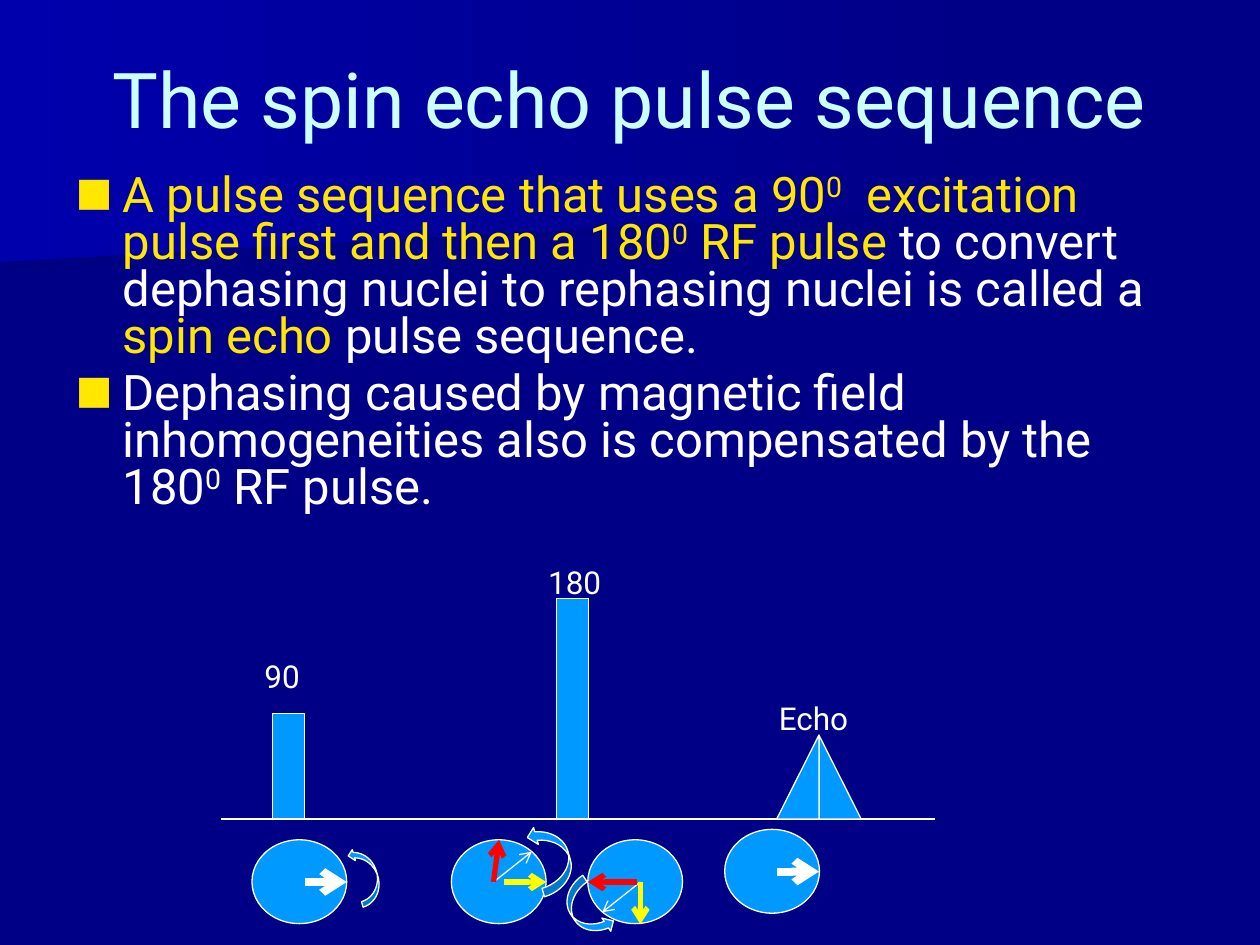
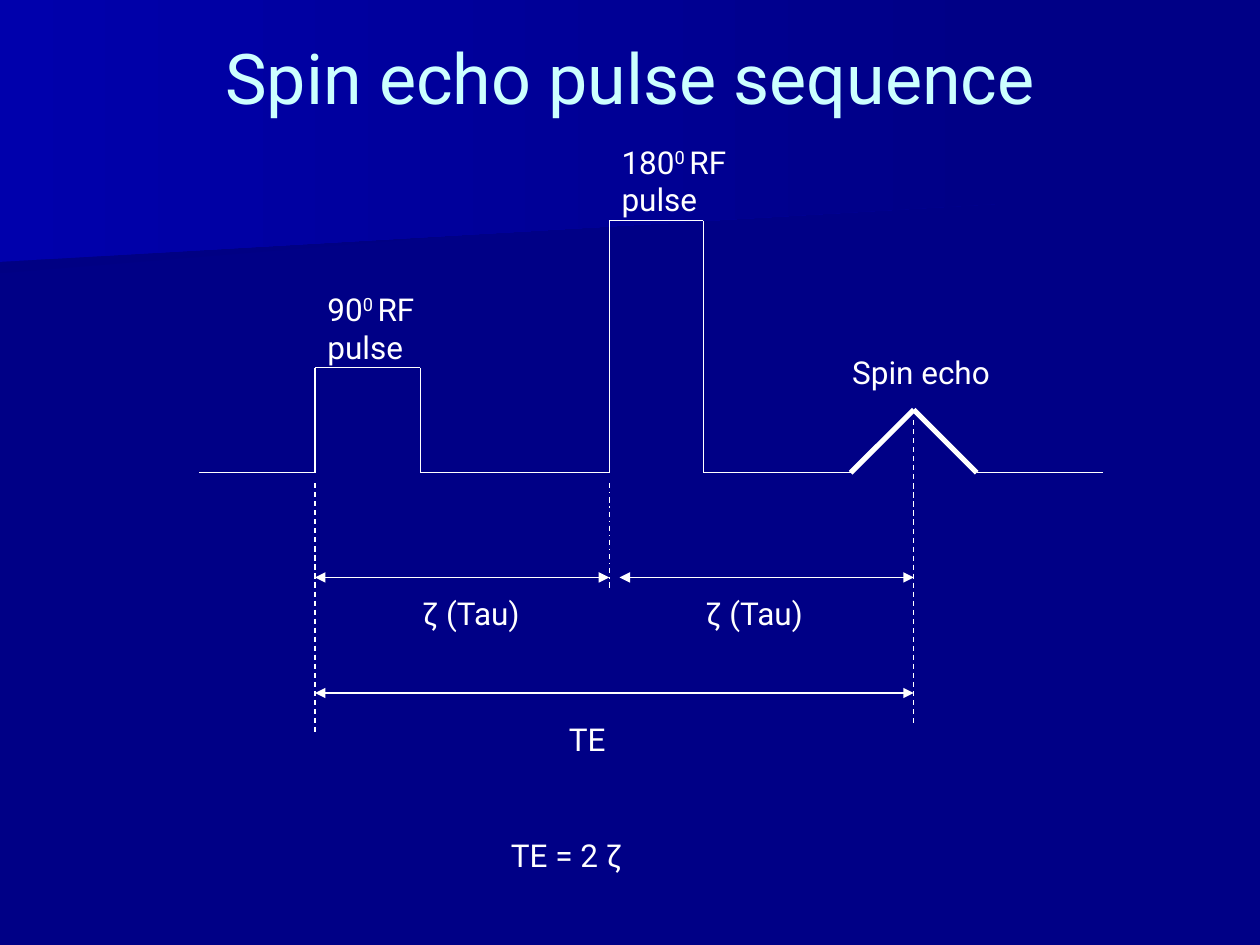
from dataclasses import dataclass

from pptx import Presentation
from pptx.dml.color import RGBColor
from pptx.enum.dml import MSO_LINE
from pptx.enum.shapes import MSO_CONNECTOR, MSO_SHAPE
from pptx.enum.text import MSO_ANCHOR, MSO_AUTO_SIZE, PP_ALIGN
from pptx.oxml.ns import qn
from pptx.slide import Slide
from pptx.text.text import _Paragraph as Paragraph
from pptx.util import Cm, Pt
from lxml import etree

# Shared look
NAVY = RGBColor(0x00, 0x00, 0x86)
DEEP_NAVY = RGBColor(0x00, 0x00, 0x83)
ROYAL = RGBColor(0x00, 0x00, 0xAC)
PALE_CYAN = RGBColor(0xCC, 0xFF, 0xFF)
GOLD = RGBColor(0xFF, 0xE7, 0x01)
SKY = RGBColor(0x00, 0x99, 0xFF)
WHITE = RGBColor(0xFF, 0xFF, 0xFF)
YELLOW = RGBColor(0xFF, 0xFF, 0x00)
RED = RGBColor(0xFF, 0x00, 0x00)
FONT = "Roboto"
THIN, BOLD, HEAVY = 0.75, 3, 4.5

STRAIGHT = MSO_CONNECTOR.STRAIGHT
RECTANGLE = MSO_SHAPE.RECTANGLE
ELLIPSE = MSO_SHAPE.OVAL
RIGHT_TRIANGLE = MSO_SHAPE.RIGHT_TRIANGLE
CURVED_ARROW = MSO_SHAPE.CURVED_UP_ARROW
DASH, DASH_DOT = MSO_LINE.DASH, MSO_LINE.DASH_DOT
MIDDLE, CENTER = MSO_ANCHOR.MIDDLE, PP_ALIGN.CENTER
NO_AUTOFIT = MSO_AUTO_SIZE.NONE
TITLE_AND_BODY, TITLE_ONLY = 1, 5


# Repeated elements, all lengths in centimetres
@dataclass
class Span:
    text: str
    color: RGBColor = WHITE
    raised: bool = False


@dataclass
class Label:
    spans: list[Span]
    left: float
    top: float
    width: float
    height: float = 1.02


@dataclass
class Line:
    x1: float
    y1: float
    x2: float
    y2: float
    color: RGBColor = WHITE
    weight: float = THIN
    dash: MSO_LINE | None = None
    head: str = ""
    tail: str = ""


@dataclass
class Figure:
    kind: MSO_SHAPE
    left: float
    top: float
    width: float
    height: float
    rotation: float = 0
    flipped: bool = False


def write_spans(para: Paragraph, spans: list[Span], size: float) -> None:
    for span in spans:
        run = para.add_run()
        run.text = span.text
        run.font.name = FONT
        run.font.size = Pt(size)
        run.font.color.rgb = span.color
        if span.raised:
            run._r.get_or_add_rPr().set("baseline", "30000")


def draw_label(slide: Slide, label: Label) -> None:
    box = slide.shapes.add_textbox(
        Cm(label.left), Cm(label.top), Cm(label.width), Cm(label.height))
    box.text_frame.word_wrap = True
    write_spans(box.text_frame.paragraphs[0], label.spans, 18)


def draw_line(slide: Slide, line: Line) -> None:
    connector = slide.shapes.add_connector(
        STRAIGHT, Cm(line.x1), Cm(line.y1), Cm(line.x2), Cm(line.y2))
    connector.line.color.rgb = line.color
    connector.line.width = Pt(line.weight)
    if line.dash:
        connector.line.dash_style = line.dash
    outline = connector.line._get_or_add_ln()
    for tag, style in (("a:headEnd", line.head), ("a:tailEnd", line.tail)):
        if style:
            etree.SubElement(outline, qn(tag), type=style)
    etree.SubElement(connector.element.spPr, qn("a:effectLst"))


def draw_figure(slide: Slide, figure: Figure) -> None:
    shape = slide.shapes.add_shape(
        figure.kind, Cm(figure.left), Cm(figure.top),
        Cm(figure.width), Cm(figure.height))
    shape.shadow.inherit = False
    shape.fill.solid()
    shape.fill.fore_color.rgb = SKY
    shape.line.color.rgb = WHITE
    shape.line.width = Pt(THIN)
    shape.rotation = figure.rotation
    if figure.flipped:
        shape.element.spPr.get_or_add_xfrm().set("flipH", "1")


def set_title(slide: Slide, text: str, size: float, height: float) -> None:
    title = slide.shapes.title
    title.left, title.top = Cm(1.27), Cm(0.76)
    title.width, title.height = Cm(22.86), Cm(height)
    frame = title.text_frame
    frame.auto_size = NO_AUTOFIT
    frame.vertical_anchor = MIDDLE
    frame.paragraphs[0].alignment = CENTER
    write_spans(frame.paragraphs[0], [Span(text, PALE_CYAN)], size)


def set_bullet(para: Paragraph) -> None:
    properties = para._p.get_or_add_pPr()
    properties.set("marL", str(Cm(0.95)))
    properties.set("indent", str(-Cm(0.95)))
    color = etree.SubElement(properties, qn("a:buClr"))
    etree.SubElement(color, qn("a:srgbClr"), val=str(GOLD))
    etree.SubElement(properties, qn("a:buSzPct"), val="80000")
    etree.SubElement(properties, qn("a:buFont"), typeface=FONT)
    etree.SubElement(properties, qn("a:buChar"), char="■")


def set_bands(deck: Presentation, slide: Slide) -> None:
    """Colour the master and move the two gradient bands to its back."""
    master = deck.slide_master
    master.background.fill.solid()
    master.background.fill.fore_color.rgb = NAVY
    bands = [
        (DEEP_NAVY, [(0, 2.57), (19.79, 2.57), (19.76, 3.89), (0, 5.51)]),
        (ROYAL, [(0, 0), (20.12, 0), (20.12, 4.11), (0, 5.28)]),
    ]
    for index, (color, corners) in enumerate(bands):
        points = [(Cm(x), Cm(y)) for x, y in corners]
        builder = slide.shapes.build_freeform(*points[0])
        builder.add_line_segments(points[1:])
        band = builder.convert_to_shape()
        band.shadow.inherit = False
        band.line.fill.background()
        band.fill.gradient()
        band.fill.gradient_angle = 0
        for stop, stop_color in zip(band.fill.gradient_stops, (color, NAVY)):
            stop.color.rgb = stop_color
        band.element.nvSpPr.cNvPr.set("id", str(100 + index))
        master.shapes.element.insert(2 + index, band.element)


def build_overview(slide: Slide) -> None:
    set_title(slide, "The spin echo pulse sequence", 44, 2.41)

    # Bulleted explanation
    body = slide.placeholders[1]
    body.left, body.top = Cm(1.27), Cm(3.39)
    body.width, body.height = Cm(22.86), Cm(15.04)
    frame = body.text_frame
    frame.auto_size = NO_AUTOFIT
    bullets = [
        [Span("A pulse sequence that uses a 90", GOLD), Span("0", GOLD, True),
         Span("  excitation pulse first and then a 180", GOLD),
         Span("0", GOLD, True), Span(" RF pulse", GOLD),
         Span(" to convert dephasing nuclei to rephasing nuclei is called a "),
         Span("spin echo", GOLD), Span(" pulse sequence.")],
        [Span("Dephasing caused by magnetic field inhomogeneities also is "
              "compensated by the 180"),
         Span("0", raised=True), Span(" RF pulse.")],
    ]
    for index, spans in enumerate(bullets):
        para = frame.add_paragraph() if index else frame.paragraphs[0]
        para.line_spacing = 0.8
        para.space_before = Pt(5.6)
        set_bullet(para)
        write_spans(para, spans, 28)

    # Pulses and echo on the time axis
    axis, echo_x, echo_half, echo_height = 16.51, 16.51, 0.85, 1.69
    draw_line(slide, Line(4.45, axis, 18.85, axis))
    for left, height in ((5.5, 2.12), (11.22, 4.45)):
        draw_figure(slide, Figure(RECTANGLE, left, axis - height, 0.64, height))
    for left, flipped in ((echo_x, False), (echo_x - echo_half, True)):
        draw_figure(slide, Figure(RIGHT_TRIANGLE, left, axis - echo_height,
                                  echo_half, echo_height, flipped=flipped))
    for text, left, top, width in (("90", 5.08, 13.12, 1.48),
                                   ("180", 10.8, 11.22, 1.69),
                                   ("Echo", 15.45, 13.97, 1.91)):
        draw_label(slide, Label([Span(text)], left, top, width))

    # Spin discs with their magnetisation vectors
    for left, top in ((5.08, 16.93), (9.1, 16.93),
                      (11.85, 16.93), (14.61, 16.72)):
        draw_figure(slide, Figure(ELLIPSE, left, top, 1.91, 1.69))
    vectors = [
        Line(6.14, 17.78, 6.99, 17.78, WHITE, HEAVY),
        Line(10.16, 17.78, 11.01, 17.78, YELLOW, BOLD),
        Line(9.95, 17.78, 10.72, 17.17),
        Line(9.95, 17.78, 10.06, 16.93, RED, BOLD),
        Line(12.91, 17.78, 12.14, 18.39),
        Line(12.91, 17.78, 12.91, 18.63, YELLOW, BOLD),
        Line(12.85, 17.78, 11.85, 17.78, RED, BOLD),
        Line(15.66, 17.57, 16.51, 17.57, WHITE, HEAVY),
    ]
    for vector in vectors:
        vector.tail = "arrow"
        draw_line(slide, vector)

    # Rotation arrows
    for left, top, width, height, rotation in (
            (11.2, 18.03, 1.27, 0.64, 56.1),
            (6.78, 17.42, 1.19, 0.46, 253.8),
            (10.41, 16.94, 1.42, 0.71, 253.8)):
        draw_figure(slide, Figure(CURVED_ARROW, left, top, width, height, rotation))


def build_timing(slide: Slide) -> None:
    set_title(slide, "Spin echo pulse sequence", 40, 1.57)

    # Waveform
    axis, first_pulse, second_pulse, echo = 9.53, 6.35, 12.28, 18.42
    echo_top = 8.26
    waveform = [
        (4.02, axis), (first_pulse, axis), (first_pulse, 7.41), (8.47, 7.41),
        (8.47, axis), (second_pulse, axis), (second_pulse, 4.45),
        (14.18, 4.45), (14.18, axis), (17.15, axis), (echo, echo_top),
        (19.69, axis), (22.23, axis),
    ]
    for start, end in zip(waveform, waveform[1:]):
        weight = BOLD if (echo, echo_top) in (start, end) else THIN
        draw_line(slide, Line(*start, *end, weight=weight))

    # Time markers and intervals
    for x, top, bottom, dash in ((first_pulse, 9.74, 14.82, DASH),
                                 (second_pulse, 9.74, 11.85, DASH_DOT),
                                 (echo, 8.47, 14.61, DASH)):
        draw_line(slide, Line(x, top, x, bottom, dash=dash))
    for start, end, y in ((first_pulse, second_pulse, 11.64),
                          (12.49, echo, 11.64), (first_pulse, echo, 13.97)):
        draw_line(slide, Line(start, y, end, y, head="triangle", tail="triangle"))

    # Labels
    for angle, left, top, width in (("90", first_pulse, 5.72, 2.54),
                                    ("180", second_pulse, 2.75, 2.96)):
        spans = [Span(angle), Span("0 ", raised=True), Span("RF pulse")]
        draw_label(slide, Label(spans, left, top, width, 1.78))
    for text, left, top, width in (("Spin echo", 16.93, 6.99, 3.6),
                                   ("ζ (Tau)", 8.26, 11.85, 2.54),
                                   ("ζ (Tau)", 13.97, 11.85, 2.96),
                                   ("TE", 11.22, 14.4, 1.69),
                                   ("TE = 2 ζ", 10.05, 16.72, 3)):
        draw_label(slide, Label([Span(text)], left, top, width))


def main() -> None:
    deck = Presentation()
    deck.slide_width, deck.slide_height = Cm(25.4), Cm(19.05)
    overview = deck.slides.add_slide(deck.slide_layouts[TITLE_AND_BODY])
    timing = deck.slides.add_slide(deck.slide_layouts[TITLE_ONLY])
    set_bands(deck, overview)
    build_overview(overview)
    build_timing(timing)
    deck.save("out.pptx")


if __name__ == "__main__":
    main()
